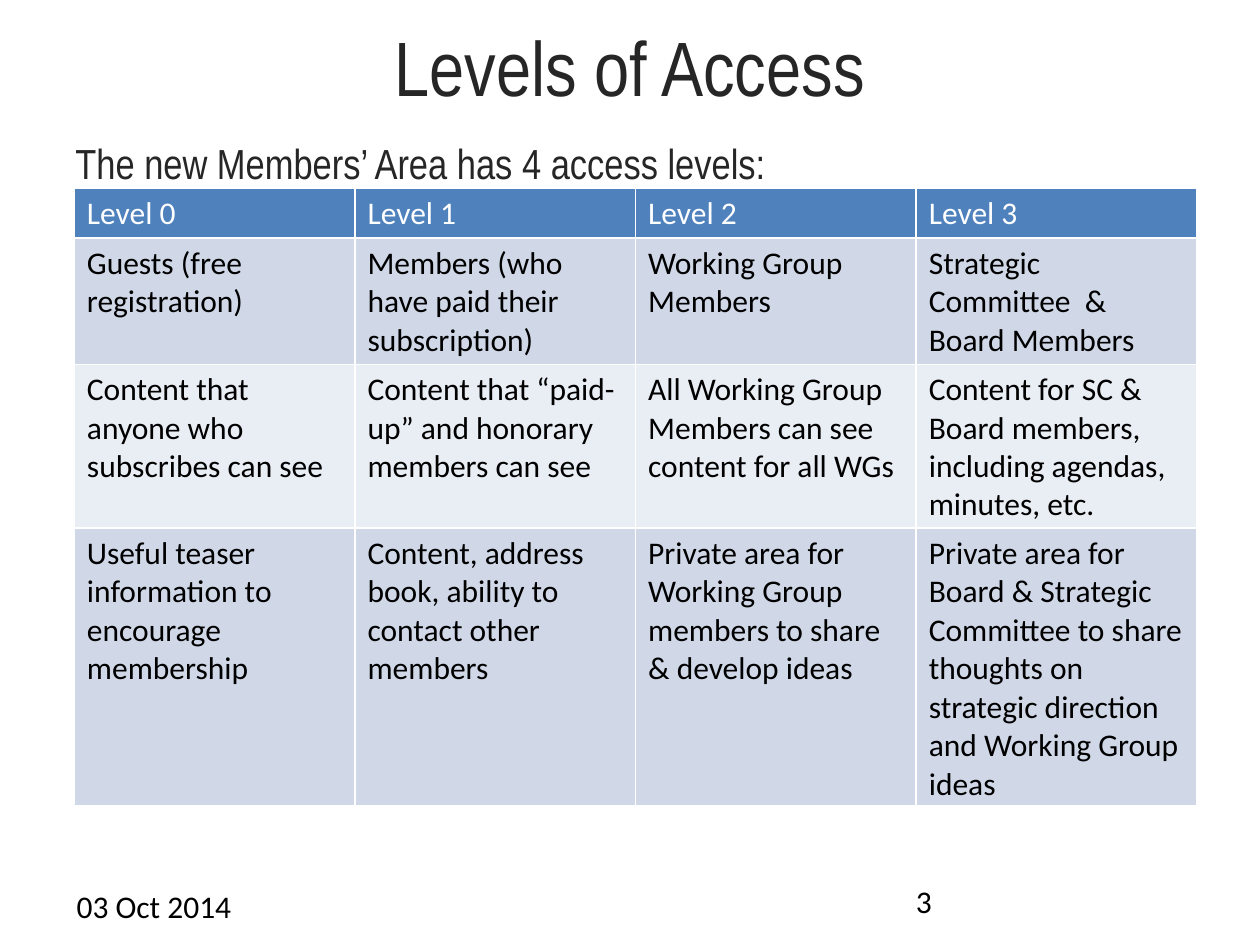
"""Build the slide that compares the four access levels of the Members' Area."""
from dataclasses import dataclass

from lxml import etree
from pptx import Presentation
from pptx.dml.color import RGBColor
from pptx.enum.text import MSO_ANCHOR, PP_ALIGN
from pptx.oxml.ns import qn
from pptx.util import Inches, Pt

CENTER, LEFT = PP_ALIGN.CENTER, PP_ALIGN.LEFT
TOP, MIDDLE = MSO_ANCHOR.TOP, MSO_ANCHOR.MIDDLE
BORDER_SIDES = ("a:lnL", "a:lnR", "a:lnT", "a:lnB")


@dataclass(frozen=True)
class Theme:
    heading_font: str = "Arial Narrow"
    body_font: str = "Calibri"
    heading: str = "262626"
    text: str = "000000"
    white: str = "FFFFFF"
    header_fill: str = "4F81BD"
    band_fills: tuple = ("E9EDF4", "D0D8E8")
    title_size: int = 44
    intro_size: int = 24
    body_size: int = 18
    border_width: int = 1


class SlideBuilder:
    def __init__(self, slide, theme):
        self.slide = slide
        self.theme = theme

    def style(self, paragraph, name, size, color):
        font_format = {"name": name, "size": Pt(size), "bold": False}
        for attribute, value in font_format.items():
            setattr(paragraph.font, attribute, value)
        paragraph.font.color.rgb = RGBColor.from_string(color)

    def text(self, content, box, name, size, color,
             align=LEFT, anchor=TOP, margin_top=0.05):
        frame = self.slide.shapes.add_textbox(*map(Inches, box)).text_frame
        frame_format = {"word_wrap": True, "vertical_anchor": anchor,
                        "margin_top": Inches(margin_top)}
        for attribute, value in frame_format.items():
            setattr(frame, attribute, value)
        paragraph = frame.paragraphs[0]
        paragraph.text = content
        paragraph.alignment = align
        self.style(paragraph, name, size, color)

    def heading(self, content, box, size, **layout):
        self.text(content, box, self.theme.heading_font, size,
                  self.theme.heading, **layout)

    def footer(self, content, box):
        self.text(content, box, self.theme.body_font,
                  self.theme.body_size, self.theme.text)

    def borders(self, cell):
        properties = cell._tc.get_or_add_tcPr()
        for position, side in enumerate(BORDER_SIDES):
            line = etree.Element(qn(side), w=str(Pt(self.theme.border_width)))
            fill = etree.SubElement(line, qn("a:solidFill"))
            etree.SubElement(fill, qn("a:srgbClr"), val=self.theme.white)
            properties.insert(position, line)

    def cell(self, cell, content, fill, color):
        cell.text = content
        cell.fill.solid()
        cell.fill.fore_color.rgb = RGBColor.from_string(fill)
        self.style(cell.text_frame.paragraphs[0], self.theme.body_font,
                   self.theme.body_size, color)
        self.borders(cell)

    def table(self, rows, left, top, width, heights):
        table = self.slide.shapes.add_table(
            len(rows), len(rows[0]), Inches(left), Inches(top),
            Inches(width), Inches(sum(heights))).table
        for row_index, (contents, height) in enumerate(zip(rows, heights)):
            table.rows[row_index].height = Inches(height)
            if row_index == 0:
                fill, color = self.theme.header_fill, self.theme.white
            else:
                fill, color = self.theme.band_fills[row_index % 2], self.theme.text
            for column_index, content in enumerate(contents):
                self.cell(table.cell(row_index, column_index), content, fill, color)


ACCESS_LEVELS = (
    ("Level 0", "Level 1", "Level 2", "Level 3"),
    ("Guests (free registration)",
     "Members (who have paid their subscription)",
     "Working Group Members",
     "Strategic Committee  & Board Members"),
    ("Content that anyone who subscribes can see",
     "Content that “paid-up” and honorary members can see",
     "All Working Group Members can see content for all WGs",
     "Content for SC & Board members, including agendas, minutes, etc."),
    ("Useful teaser information to encourage membership",
     "Content, address book, ability to contact other members",
     "Private area for Working Group members to share & develop ideas",
     "Private area for Board & Strategic Committee to share thoughts on "
     "strategic direction and Working Group ideas"),
)
LINES_PER_ROW = (1, 3, 4, 7)


def main():
    theme = Theme(band_fills=("D0D8E8", "E9EDF4")[::-1])
    presentation = Presentation()
    presentation.slide_width, presentation.slide_height = Inches(10), Inches(7.5)
    slide = presentation.slides.add_slide(presentation.slide_layouts[6])
    builder = SlideBuilder(slide, theme)

    builder.heading("Levels of Access", (0.5, 0.05, 9, 0.94),
                    theme.title_size, align=CENTER, anchor=MIDDLE)
    builder.heading("The new Members’ Area has 4 access levels:",
                    (0.5, 0.99, 9, 4.95), theme.intro_size, margin_top=0.1)
    builder.footer("03 Oct 2014", (0.51, 6.99, 2.33, 0.4))
    builder.footer("3", (7.17, 6.95, 2.33, 0.4))
    row_heights = [0.1 + 0.3 * lines for lines in LINES_PER_ROW]
    builder.table(ACCESS_LEVELS, 0.59, 1.49, 8.91, row_heights)

    presentation.save("out.pptx")


if __name__ == "__main__":
    main()
